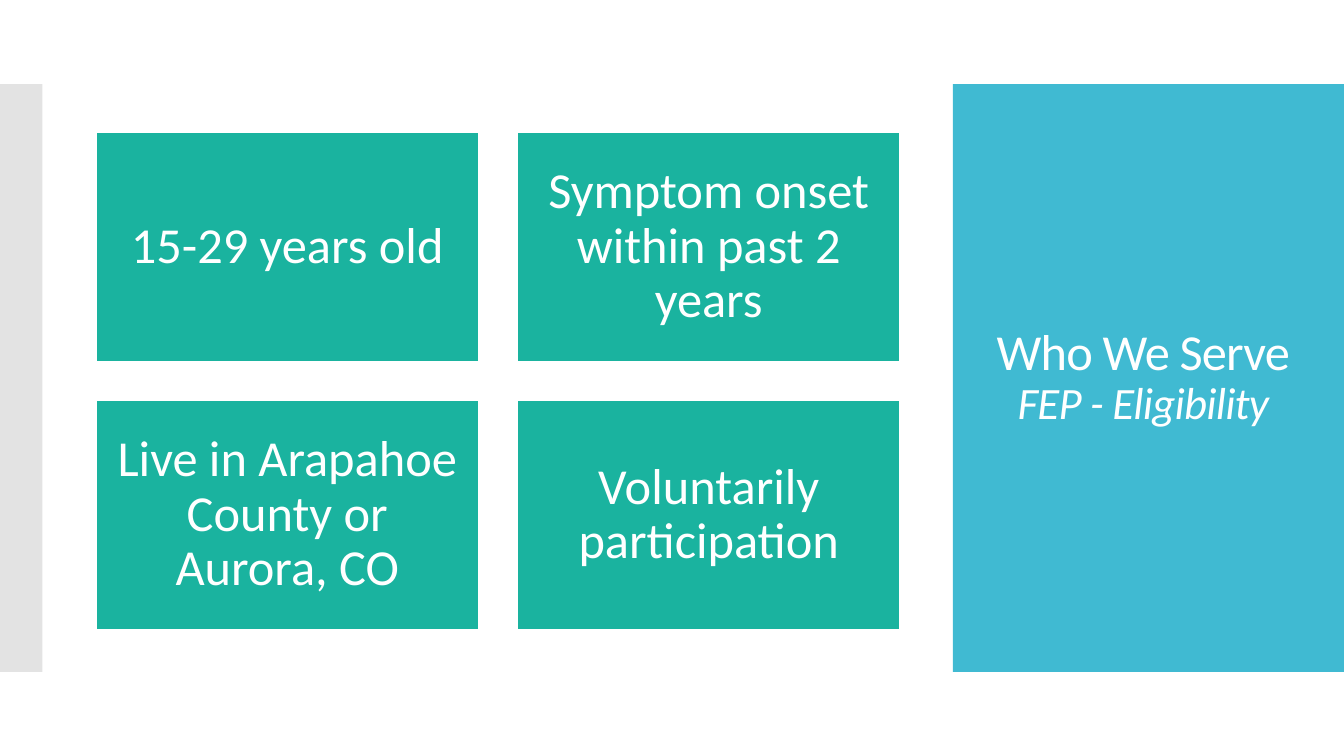
from itertools import product

from pptx import Presentation
from pptx.dml.color import RGBColor
from pptx.enum.shapes import MSO_SHAPE as Shape
from pptx.enum.text import MSO_ANCHOR as Anchor, MSO_AUTO_SIZE as AutoSize, PP_ALIGN as Align
from pptx.oxml.ns import qn
from pptx.util import Inches, Pt
from lxml.etree import SubElement

COLORS = {"panel": "40BAD2", "edge": "C8C8C8", "card": "1AB39F", "white": "FFFFFF"}
FONT = "Calibri"
WIDTH, HEIGHT = 13.33, 7.5
BAND_TOP, BAND_HEIGHT = HEIGHT / 9, HEIGHT * 7 / 9
CRITERIA = [
    "15-29 years old",
    "Symptom onset within past 2 years",
    "Live in Arapahoe County or Aurora, CO",
    "Voluntarily participation",
]


def color(name):
    """Return the named palette colour."""
    return RGBColor.from_string(COLORS[name])


def add_block(slide, box, fill):
    """Add a flat, borderless rectangle in the given box."""
    block = slide.shapes.add_shape(Shape.RECTANGLE, *map(Inches, box))
    block.shadow.inherit = False
    block.fill.solid()
    block.fill.fore_color.rgb = color(fill)
    block.line.fill.background()
    return block


def style_paragraph(paragraph, size):
    """Centre a paragraph and give it the white slide font."""
    paragraph.alignment = Align.CENTER
    paragraph.line_spacing = 0.9
    paragraph.font.name = FONT
    paragraph.font.size = Pt(size)
    paragraph.font.color.rgb = color("white")


def add_edge(slide, box):
    """Add the half-transparent strip at the slide's edge."""
    edge = add_block(slide, box, "edge")
    fill_color = edge.fill._xPr.find(qn("a:solidFill"))[0]
    SubElement(fill_color, qn("a:alpha"), val="50000")


def add_title_panel(slide, box):
    """Add the coloured panel and set the title inside it."""
    left, top, width, height = box
    panel = add_block(slide, box, "panel")
    title = slide.shapes.title
    panel._element.addnext(title._element)
    title.left, title.top = Inches(left + 0.28), Inches(top + 0.4)
    title.width, title.height = Inches(width - 0.66), Inches(height - 0.8)
    frame = title.text_frame
    frame.word_wrap = True
    frame.auto_size = AutoSize.NONE
    frame.vertical_anchor = Anchor.MIDDLE
    paragraph = frame.paragraphs[0]
    style_paragraph(paragraph, 36)
    heading = paragraph.add_run()
    heading.text = "Who We Serve"
    paragraph.add_line_break()
    subheading = paragraph.add_run()
    subheading.text = "FEP - Eligibility"
    subheading.font.size = Pt(32)
    subheading.font.italic = True
    for run in (heading, subheading):
        run.font._element.set("spc", "-60")


def add_card(slide, box, text):
    """Add one criterion card with centred text."""
    card = add_block(slide, box, "card")
    card.line.color.rgb = color("white")
    card.line.width = Pt(1.35)
    frame = card.text_frame
    frame.word_wrap = True
    frame.vertical_anchor = Anchor.MIDDLE
    frame.margin_left = frame.margin_right = Inches(0.15)
    frame.margin_top = frame.margin_bottom = Inches(0.15)
    frame.text = text
    style_paragraph(frame.paragraphs[0], 36)


def add_card_grid(slide, box, texts, gap=0.38):
    """Fill the box with a two-by-two grid of cards."""
    left, top, width, height = box
    card_width, card_height = (width - gap) / 2, (height - gap) / 2
    for (row, column), text in zip(product(range(2), repeat=2), texts):
        card_left = left + column * (card_width + gap)
        card_top = top + row * (card_height + gap)
        add_card(slide, (card_left, card_top, card_width, card_height), text)


def main():
    """Build and save the eligibility slide."""
    presentation = Presentation()
    presentation.slide_width, presentation.slide_height = Inches(WIDTH), Inches(HEIGHT)
    slide = presentation.slides.add_slide(presentation.slide_layouts[5])
    add_title_panel(slide, (9.45, BAND_TOP, WIDTH - 9.45, BAND_HEIGHT))
    add_edge(slide, (0, BAND_TOP, 0.42, BAND_HEIGHT))
    add_card_grid(slide, (0.95, 1.31, 7.98, 4.94), CRITERIA)
    presentation.save("out.pptx")


if __name__ == "__main__":
    main()
